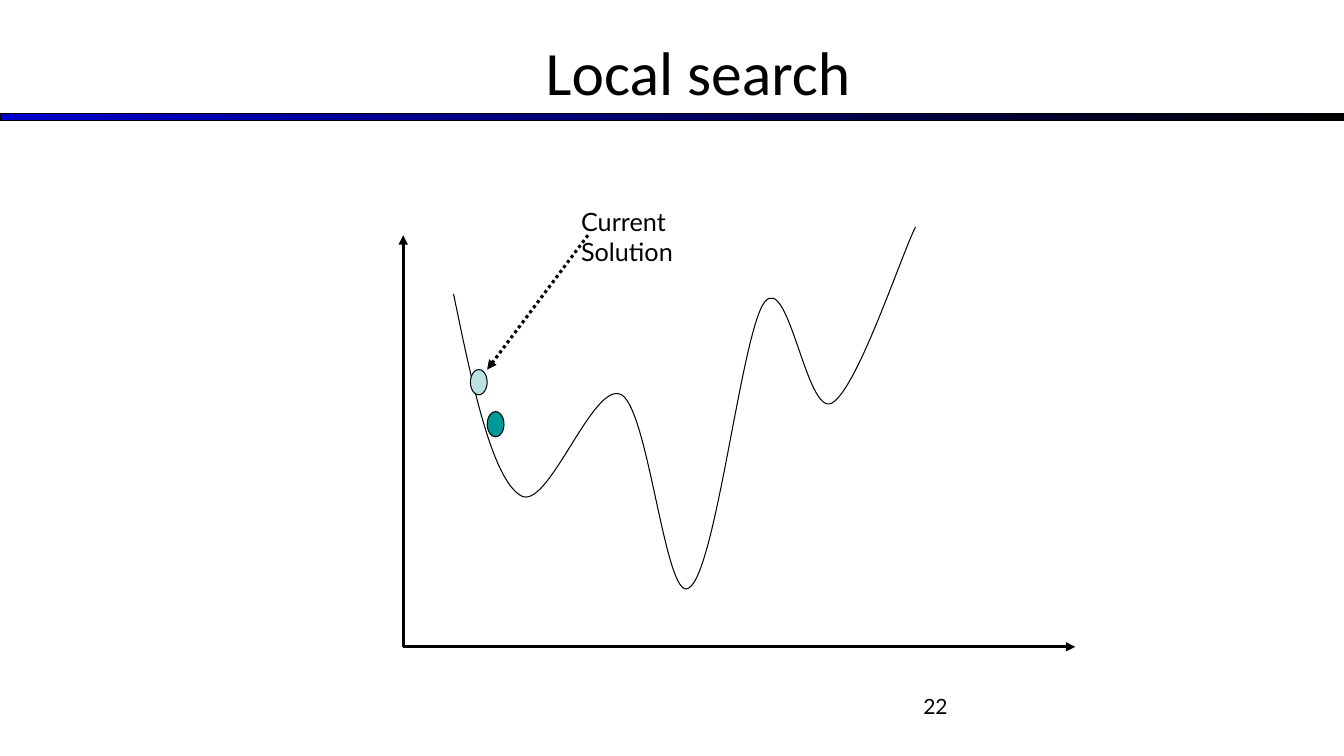
"""Build a slide on local search with a cost curve and two solutions."""
from lxml.etree import SubElement
from pptx import Presentation
from pptx.dml.color import RGBColor as RGB
from pptx.enum.shapes import MSO_CONNECTOR as Link, MSO_SHAPE as Form
from pptx.enum.text import MSO_ANCHOR as Anchor, PP_ALIGN as Align
from pptx.oxml.ns import qn
from pptx.util import Pt

PX = 9525
BLACK = RGB(0, 0, 0)
BLUE = RGB(0, 0, 0xCC)
TEAL = RGB(0, 0x99, 0x99)
PALE = RGB(0xBB, 0xE0, 0xE3)

START = (432, 280)
CURVES = [
    (450, 368), (469, 456), (496, 472),
    (522, 488), (565, 361), (592, 376),
    (618, 391), (634, 575), (656, 560),
    (682, 545), (706, 318), (728, 288),
    (751, 258), (768, 396), (792, 384),
    (816, 372), (858, 244), (872, 216),
]


def scale(*sizes):
    return [size * PX for size in sizes]


def ink(shape, width):
    shape.line.color.rgb = BLACK
    shape.line.width = Pt(width)


def add_form(slide, form, box):
    shape = slide.shapes.add_shape(form, *scale(*box))
    shape.shadow.inherit = False
    ink(shape, 0.75)
    return shape


def add_bar(slide, box):
    bar = add_form(slide, Form.RECTANGLE, box)
    bar.fill.gradient()
    bar.fill.gradient_angle = 0
    for stop, color in zip(bar.fill.gradient_stops, (BLUE, BLACK)):
        stop.color.rgb = color


def add_dot(slide, box, color):
    dot = add_form(slide, Form.OVAL, box)
    dot.fill.solid()
    dot.fill.fore_color.rgb = color


def add_text(slide, box, text, size, font="Lato", align=Align.LEFT, anchor=Anchor.TOP):
    frame = slide.shapes.add_textbox(*scale(*box)).text_frame
    frame.word_wrap = True
    frame.vertical_anchor = anchor
    para = frame.paragraphs[0]
    para.alignment = align
    run = para.add_run()
    run.text = text
    for name, value in {"size": Pt(size), "name": font}.items():
        setattr(run.font, name, value)
    run.font.color.rgb = BLACK


def add_arrow(slide, ends, dash="solid"):
    arrow = slide.shapes.add_connector(Link.STRAIGHT, *scale(*ends))
    ink(arrow, 2.25)
    props = arrow.element.spPr
    line = props.find(qn("a:ln"))
    SubElement(line, qn("a:prstDash"), val=dash)
    SubElement(line, qn("a:tailEnd"), type="triangle")
    SubElement(props, qn("a:effectLst"))


def add_curve(slide, start, points):
    pen = slide.shapes.build_freeform(*start, scale=PX)
    pen.add_line_segments(points, close=False)
    shape = pen.convert_to_shape()
    shape.shadow.inherit = False
    shape.fill.background()
    ink(shape, 0.75)
    track = next(shape.element.iter(qn("a:path")))
    steps = track.findall(qn("a:lnTo"))
    for i in range(0, len(steps), 3):
        bend = SubElement(track, qn("a:cubicBezTo"))
        for step in steps[i:i + 3]:
            bend.append(step[0])
            track.remove(step)


def main():
    deck = Presentation()
    deck.slide_width, deck.slide_height = scale(1280, 720)
    slide = deck.slides.add_slide(deck.slide_layouts[6])
    add_bar(slide, (0, 108, 1280, 7))
    add_text(slide, (688, 656, 224, 50), "22", 15, align=Align.RIGHT)
    add_text(slide, (256, 25, 818, 84), "Local search", 44, "Calibri",
             Align.CENTER, Anchor.MIDDLE)
    add_arrow(slide, (384, 616, 384, 224))
    add_arrow(slide, (384, 616, 1024, 616))
    add_curve(slide, START, CURVES)
    add_dot(slide, (464, 392, 16, 24), TEAL)
    add_arrow(slide, (560, 224, 464, 352), "sysDot")
    add_dot(slide, (448, 352, 16, 24), PALE)
    add_text(slide, (544, 192, 112, 67), "Current Solution", 18)
    deck.save("out.pptx")


if __name__ == "__main__":
    main()
